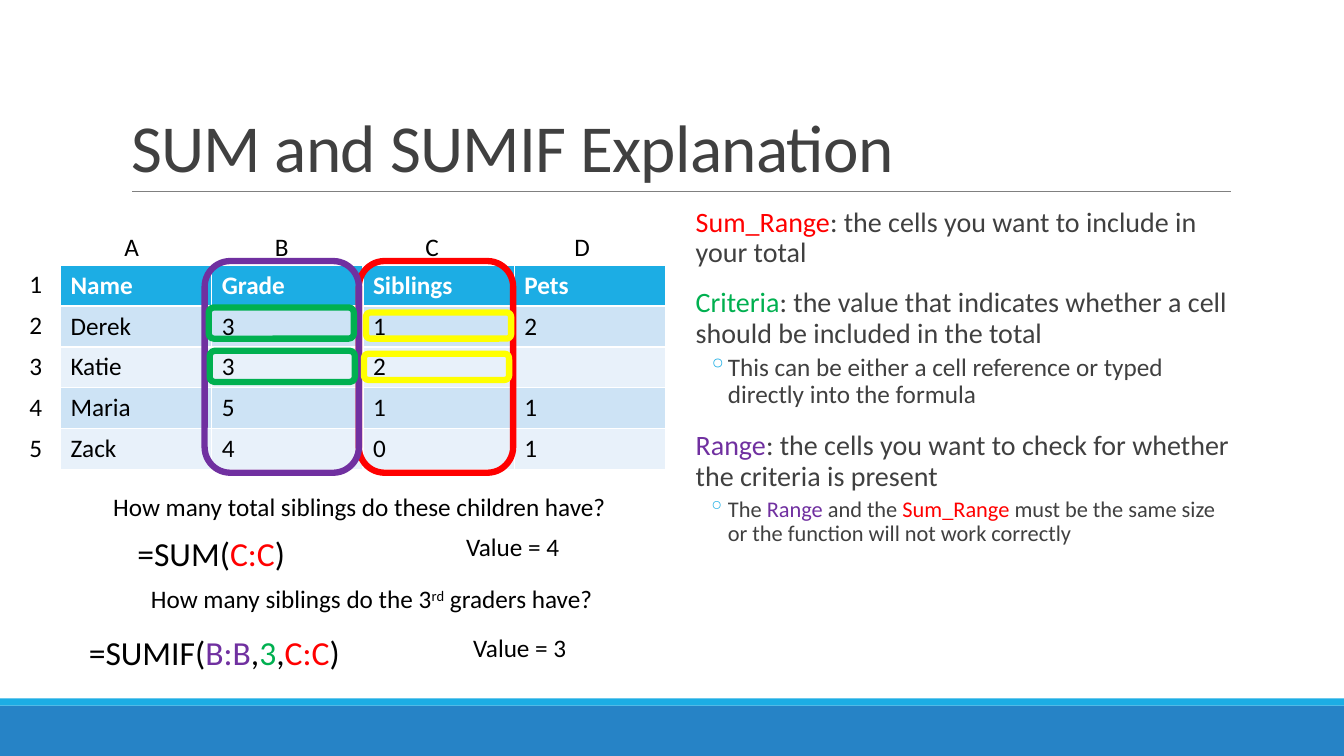
from dataclasses import dataclass

from lxml import etree
from pptx import Presentation
from pptx import util as u
from pptx.dml.color import RGBColor
from pptx.enum import shapes, text
from pptx.oxml.ns import qn

PX = 9144  # EMU per px, 100 px to the inch


@dataclass(frozen=True)
class Theme:
    font: str = "Calibri"
    black: str = "000000"
    white: str = "FFFFFF"
    gray: str = "404040"
    rule: str = "808080"
    accent: str = "1CADE4"
    footer: str = "2683C6"
    band_dark: str = "CDE3F5"
    band_light: str = "E8F1FA"
    sum_range: str = "FF0000"
    criteria: str = "00B050"
    check_range: str = "7030A0"
    matches: str = "FFFF00"
    title: int = 48
    formula: int = 24
    lead: int = 20
    normal: int = 18
    small: int = 16


THEME = Theme()
LEAD = dict(line_spacing=0.9, space_before=u.Pt(12), space_after=u.Pt(2))
DETAIL = dict(line_spacing=0.9, space_before=u.Pt(2), space_after=u.Pt(4))
CENTER = dict(alignment=text.PP_ALIGN.CENTER)


def px(*lengths):
    return [u.Emu(length * PX) for length in lengths]


def rgb(value):
    return RGBColor.from_string(value)


def apply(target, values):
    for name, value in values.items():
        setattr(target, name, value)


def write(para, spans, size, color=THEME.black, bold=False, **values):
    """Fill a paragraph with (words, colour, baseline) spans; the last two may be left out."""
    apply(para, values)
    for words, *rest in spans:
        span = para.add_run()
        span.text = words
        apply(span.font, dict(name=THEME.font, size=u.Pt(size), bold=bold))
        span.font.color.rgb = rgb(rest[0] if rest else color)
        if len(rest) > 1:
            span.font._element.set("baseline", str(rest[1]))


def add_bar(page, place, color):
    bar = page.shapes.add_shape(shapes.MSO_SHAPE.RECTANGLE, *px(*place))
    bar.shadow.inherit = False
    bar.fill.solid()
    bar.fill.fore_color.rgb = rgb(color)
    bar.line.fill.background()


def add_outline(page, place, color):
    frame = page.shapes.add_shape(shapes.MSO_SHAPE.ROUNDED_RECTANGLE, *px(*place))
    frame.shadow.inherit = False
    frame.fill.background()
    frame.line.color.rgb = rgb(color)
    frame.line.width = u.Pt(4.5)


def add_rule(page, start, end):
    rule = page.shapes.add_connector(shapes.MSO_CONNECTOR.STRAIGHT, *px(*start, *end))
    rule.line.color.rgb = rgb(THEME.rule)
    rule.line.width = u.Pt(0.5)
    etree.SubElement(rule._element.spPr, qn("a:effectLst"))


def add_title(page, words):
    title = page.shapes.title
    apply(title, dict(zip(("left", "top", "width", "height"), px(120, 31, 1100, 159))))
    apply(title.text_frame, dict(vertical_anchor=text.MSO_ANCHOR.BOTTOM, word_wrap=True,
                                 auto_size=text.MSO_AUTO_SIZE.NONE))
    para = title.text_frame.paragraphs[0]
    write(para, [(words,)], THEME.title, THEME.gray,
          alignment=text.PP_ALIGN.LEFT, line_spacing=0.85)
    para.runs[0].font._element.set("spc", "-50")


def add_text(page, place, spans, size=THEME.normal):
    box = page.shapes.add_textbox(*px(*place))
    box.text_frame.word_wrap = True
    write(box.text_frame.paragraphs[0], spans, size, **CENTER)


def add_grid(page, place, rows, header=False, banded=False, **values):
    """Add a table with equal columns and rows; without banding its cells are clear."""
    grid = page.shapes.add_table(len(rows), len(rows[0]), *px(*place)).table
    apply(grid, dict(first_row=header, horz_banding=False))
    for r, row in enumerate(rows):
        is_head = header and r == 0
        for c, words in enumerate(row):
            cell = grid.cell(r, c)
            if banded:
                band = THEME.band_dark if r % 2 else THEME.band_light
                cell.fill.solid()
                cell.fill.fore_color.rgb = rgb(THEME.accent if is_head else band)
            else:
                cell.fill.background()
            write(cell.text_frame.paragraphs[0], [(words,)], THEME.normal,
                  THEME.white if is_head else THEME.black, is_head, **values)


def set_indent(para, margin, bullet=None):
    props = para._p.get_or_add_pPr()
    props.set("marL", str(margin * PX))
    if bullet:
        props.set("indent", str(-20 * PX))
        color = etree.SubElement(props, qn("a:buClr"))
        etree.SubElement(color, qn("a:srgbClr"), val=THEME.accent)
        etree.SubElement(props, qn("a:buChar"), char=bullet)


def add_definitions(page, place, items):
    """Add paragraphs of (size, is_detail, spans)."""
    frame = page.shapes.add_textbox(*px(*place)).text_frame
    apply(frame, dict(word_wrap=True, margin_left=0, margin_right=0))
    for i, (size, is_detail, spans) in enumerate(items):
        para = frame.add_paragraph() if i else frame.paragraphs[0]
        write(para, spans, size, THEME.gray, **(DETAIL if is_detail else LEAD))
        if is_detail:
            set_indent(para, 42, "◦")
        else:
            set_indent(para, 10)


def main():
    deck = Presentation()
    deck.slide_width, deck.slide_height = px(1333, 750)
    page = deck.slides.add_slide(deck.slide_layouts[5])

    # Footer bars, title and rule
    add_bar(page, (0, 700, 1333, 50), THEME.footer)
    add_bar(page, (0, 693, 1333, 7), THEME.accent)
    add_rule(page, (131, 190), (1221, 190))
    add_title(page, "SUM and SUMIF Explanation")

    # Sheet with its column letters and row numbers
    add_grid(page, (56, 226, 596, 40), ["ABCD"], **CENTER)
    add_grid(page, (19, 262, 68, 204), "12345")
    add_grid(page, (60, 263, 600, 203), [
        ("Name", "Grade", "Siblings", "Pets"),
        ("Derek", "3", "1", "2"),
        ("Katie", "3", "2", ""),
        ("Maria", "5", "1", "1"),
        ("Zack", "4", "0", "1"),
    ], header=True, banded=True)

    # Definitions
    add_definitions(page, (680, 202, 540, 496), [
        (THEME.lead, False, [("Sum_Range", THEME.sum_range),
                             (": the cells you want to include in your total",)]),
        (THEME.lead, False, [
            ("Criteria", THEME.criteria),
            (": the value that indicates whether a cell should be included in the total",)]),
        (THEME.normal, True, [
            ("This can be either a cell reference or typed directly into the formula",)]),
        (THEME.lead, False, [
            ("Range", THEME.check_range),
            (": the cells you want to check for whether the criteria is present",)]),
        (THEME.small, True, [
            ("The ",), ("Range ", THEME.check_range), ("and the ",),
            ("Sum_Range", THEME.sum_range),
            (" must be the same size or the function will not work correctly",)]),
    ])

    # Questions, formulas and results
    add_text(page, (56, 483, 601, 40), [("How many total siblings do these children have?",)])
    add_text(page, (68, 524, 283, 51),
             [("=SUM(",), ("C:C", THEME.sum_range), (")",)], THEME.formula)
    add_text(page, (367, 522, 283, 40), [("Value = 4",)])
    add_text(page, (68, 574, 601, 40), [("How many siblings do the 3",),
                                        ("rd", THEME.black, 30000), (" graders have?",)])
    add_text(page, (57, 622, 311, 51),
             [("=SUMIF(",), ("B:B", THEME.check_range), (",",), ("3", THEME.criteria),
              (",",), ("C:C", THEME.sum_range), (")",)], THEME.formula)
    add_text(page, (374, 622, 283, 40), [("Value = 3",)])

    # Outlines around the ranges and the matching cells
    for place, color in (
        ((356, 259, 153, 210), THEME.sum_range),
        ((203, 259, 153, 210), THEME.check_range),
        ((207, 305, 144, 31), THEME.criteria),
        ((208, 348, 144, 31), THEME.criteria),
        ((363, 310, 144, 26), THEME.matches),
        ((361, 351, 144, 26), THEME.matches),
    ):
        add_outline(page, place, color)

    deck.save("out.pptx")


if __name__ == "__main__":
    main()
